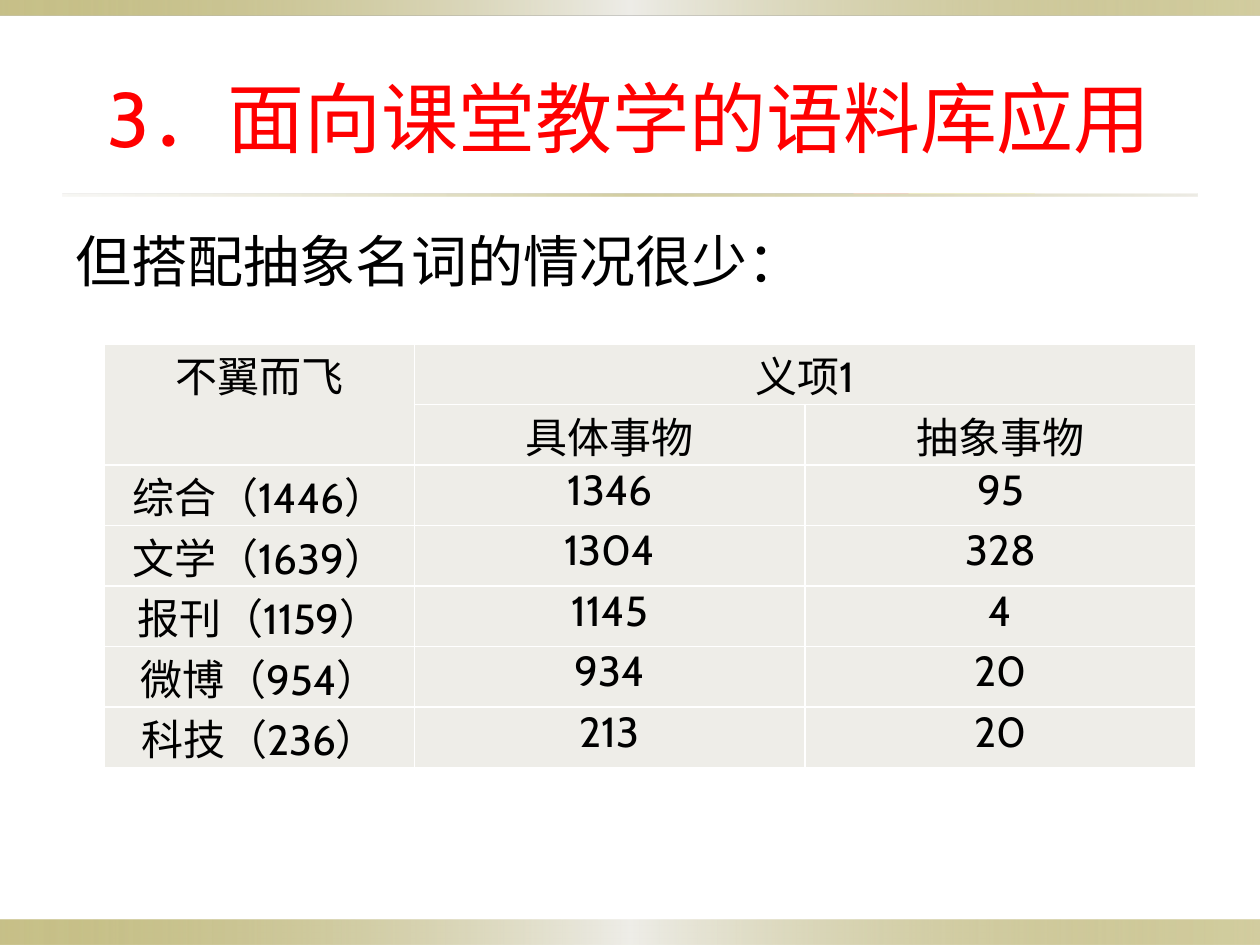
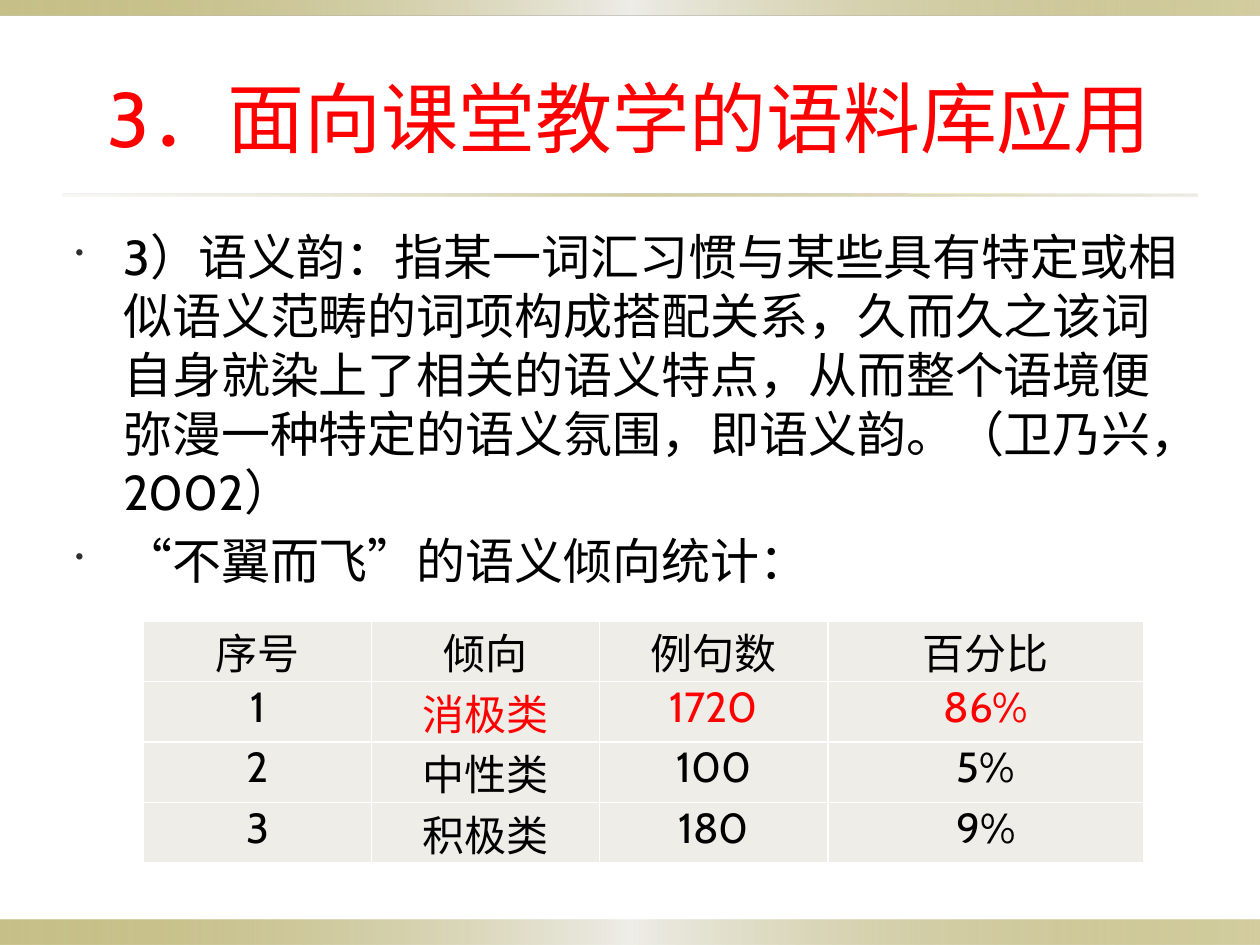
from dataclasses import dataclass

from lxml import etree
from pptx import Presentation
from pptx import util as u
from pptx.dml.color import RGBColor
from pptx.enum import lang, shapes, text
from pptx.oxml import ns


@dataclass(frozen=True)
class Theme:
    """Colours, font and type sizes shared by the deck."""

    font: str = "Cabin"
    ink: str = "000000"
    accent: str = "FF0000"
    bullet: str = "2F2F2F"
    paper: str = "FFFFFF"
    cell: str = "EEEDE8"
    olive: str = "918415"
    sand: str = "DCD9CC"
    title_size: int = 44
    lead_size: int = 32
    body_size: int = 28
    table_size: int = 24


THEME = Theme()
TITLE = "3．面向课堂教学的语料库应用"
BAND_STOPS = [(0, THEME.olive, 50), (50, THEME.cell, 100), (100, THEME.olive, 40)]
RULE_STOPS = [(0, THEME.sand, 20), (50, THEME.olive, 40), (100, THEME.sand, 50)]
BANDS = [
    ((0, 7.3, 10, 0.2), BAND_STOPS),
    ((0, 0, 10, 0.12), BAND_STOPS),
    ((0.5, 1.54, 9, 0.02), RULE_STOPS),
]
TITLE_BOX = (0.5, 0.3, 9, 1.25)
BODY_BOX = (0.5, 1.75, 9, 5.13)
ROW_HEIGHT = 0.48

COLLOCATION_ROWS = [
    ["不翼而飞", "义项1", ""],
    ["", "具体事物", "抽象事物"],
    ["综合（1446）", "1346", "95"],
    ["文学（1639）", "1304", "328"],
    ["报刊（1159）", "1145", "4"],
    ["微博（954）", "934", "20"],
    ["科技（236）", "213", "20"],
]
TENDENCY_ROWS = [
    ["序号", "倾向", "例句数", "百分比"],
    ["1", "消极类", "1720", "86%"],
    ["2", "中性类", "100", "5%"],
    ["3", "积极类", "180", "9%"],
]
PROSODY_TEXT = [
    "3）语义韵：指某一词汇习惯与某些具有特定或相似语义范畴的词项构成搭配关系，"
    "久而久之该词自身就染上了相关的语义特点，从而整个语境便弥漫一种特定的语义氛围，"
    "即语义韵。（卫乃兴，2002）",
    "“不翼而飞”的语义倾向统计：",
]


def inches(values):
    """Turn plain numbers into lengths."""
    return [u.Inches(value) for value in values]


def add_child(parent, tag, **attributes):
    """Append a drawing element with the given attributes."""
    child = etree.SubElement(parent, ns.qn(tag))
    for name, value in attributes.items():
        child.set(name, str(value))
    return child


def add_span(para, words, size, color=THEME.ink):
    """Add one styled run to a paragraph."""
    span = para.add_run()
    span.text = words
    span.font.name = THEME.font
    span.font.size = u.Pt(size)
    span.font.color.rgb = RGBColor.from_string(color)
    span.font.language_id = lang.MSO_LANGUAGE_ID.SIMPLIFIED_CHINESE


def add_band(page, box, stops):
    """Draw a horizontal band that fades through the gradient stops."""
    band = page.shapes.add_shape(shapes.MSO_SHAPE.RECTANGLE, *inches(box))
    band.shadow.inherit = False
    band.line.fill.background()
    band.fill.gradient()
    band.fill.gradient_angle = 0
    stop_list = band._element.spPr.find(".//" + ns.qn("a:gsLst"))
    for stop in list(stop_list):
        stop_list.remove(stop)
    for position, color, opacity in stops:
        stop = add_child(stop_list, "a:gs", pos=position * 1000)
        tint = add_child(stop, "a:srgbClr", val=color)
        add_child(tint, "a:alpha", val=opacity * 1000)


def add_frame(page, box, anchor):
    """Add a wrapping text box and return its text frame."""
    frame = page.shapes.add_textbox(*inches(box)).text_frame
    frame.word_wrap = True
    frame.vertical_anchor = anchor
    return frame


def add_title(page, box, words):
    """Place the centred title."""
    para = add_frame(page, box, text.MSO_ANCHOR.MIDDLE).paragraphs[0]
    para.alignment = text.PP_ALIGN.CENTER
    add_span(para, words, THEME.title_size, THEME.accent)


def set_bullet(para):
    """Give a paragraph a hanging half-size bullet."""
    props = para._p.get_or_add_pPr()
    indent = u.Inches(0.38)
    props.set("marL", str(indent))
    props.set("indent", str(-indent))
    add_child(add_child(props, "a:buClr"), "a:srgbClr", val=THEME.bullet)
    add_child(props, "a:buSzPct", val=50000)
    add_child(props, "a:buChar", char="•")


def add_body(page, box, lines, size, bulleted=False):
    """Place the body paragraphs."""
    frame = add_frame(page, box, text.MSO_ANCHOR.TOP)
    for index, words in enumerate(lines):
        para = frame.paragraphs[0] if index == 0 else frame.add_paragraph()
        para.space_before = u.Pt(size * 0.2)
        if bulleted:
            set_bullet(para)
        add_span(para, words, size)


def style_cell(cell):
    """Set the fill, margins and white borders of a cell."""
    cell.margin_left = cell.margin_right = u.Inches(0.07)
    cell.margin_top = cell.margin_bottom = 0
    props = cell._tc.get_or_add_tcPr()
    for side in ("L", "R", "T", "B"):
        line = add_child(props, f"a:ln{side}", w=u.Pt(1))
        add_child(add_child(line, "a:solidFill"), "a:srgbClr", val=THEME.paper)
    cell.fill.solid()
    cell.fill.fore_color.rgb = RGBColor.from_string(THEME.cell)


def add_grid(page, corner, widths, rows, merges=(), accents=()):
    """Place a table, merge its spans and colour the accent cells."""
    size = (sum(widths), ROW_HEIGHT * len(rows))
    table = page.shapes.add_table(len(rows), len(widths), *inches((*corner, *size))).table
    table.first_row = table.horz_banding = False
    for column, width in zip(table.columns, widths):
        column.width = u.Inches(width)
    for start, end in merges:
        table.cell(*start).merge(table.cell(*end))
    for r, row in enumerate(rows):
        for c, words in enumerate(row):
            cell = table.cell(r, c)
            style_cell(cell)
            if words:
                para = cell.text_frame.paragraphs[0]
                para.alignment = text.PP_ALIGN.CENTER
                color = THEME.accent if (r, c) in accents else THEME.ink
                add_span(para, words, THEME.table_size, color)


def add_page(deck):
    """Add a blank page with the shared bands and title."""
    page = deck.slides.add_slide(deck.slide_layouts[6])
    for box, stops in BANDS:
        add_band(page, box, stops)
    add_title(page, TITLE_BOX, TITLE)
    return page


def build_collocation_page(deck):
    """Build the page on concrete and abstract collocates."""
    page = add_page(deck)
    add_body(page, BODY_BOX, ["但搭配抽象名词的情况很少："], THEME.lead_size)
    merges = [((0, 0), (1, 0)), ((0, 1), (0, 2))]
    add_grid(page, (0.83, 2.73), [2.46, 3.1, 3.1], COLLOCATION_ROWS, merges)


def build_prosody_page(deck):
    """Build the page on semantic prosody."""
    page = add_page(deck)
    add_body(page, BODY_BOX, PROSODY_TEXT, THEME.body_size, bulleted=True)
    accents = [(1, column) for column in range(1, 4)]
    widths = [1.81, 1.81, 1.81, 2.51]
    add_grid(page, (1.14, 4.93), widths, TENDENCY_ROWS, accents=accents)


def main():
    """Build and save the deck."""
    deck = Presentation()
    deck.slide_width, deck.slide_height = inches((10, 7.5))
    build_collocation_page(deck)
    build_prosody_page(deck)
    deck.save("out.pptx")


if __name__ == "__main__":
    main()
